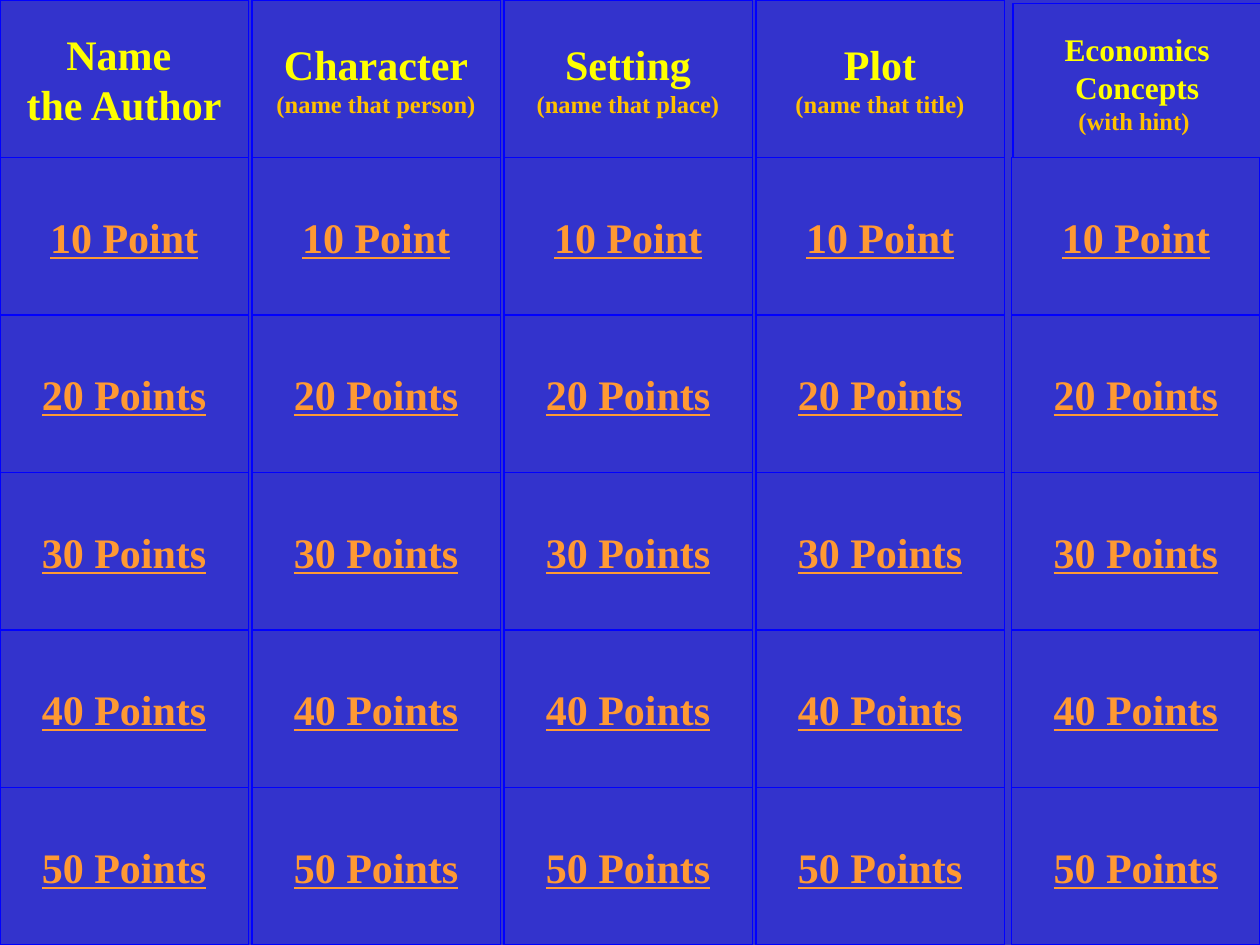
"""Build a quiz board with five categories and five point levels."""
import pptx
import pptx.dml.color
import pptx.enum.shapes
import pptx.enum.text
import pptx.util

Inches = pptx.util.Inches
RGBColor = pptx.dml.color.RGBColor

BOARD_BLUE = RGBColor(0x33, 0x33, 0xCC)
EDGE_BLUE = RGBColor(0x00, 0x00, 0xFF)
TITLE_YELLOW = RGBColor(0xFF, 0xFF, 0x00)
HINT_GOLD = RGBColor(0xFF, 0xC0, 0x00)
POINT_ORANGE = RGBColor(0xFF, 0x99, 0x33)

TILE_WIDTH = 1.97
TILE_HEIGHT = 1.25
COLUMN_LEFTS = [0, 2, 4, 6, 8.03]


def title(text, size=24):
    return text, size, TITLE_YELLOW


def hint(text):
    return text, 14, HINT_GOLD


CATEGORIES = [
    [[title("Name "), title("the Author")]],
    [[title("Character")], [hint("(name that person)")]],
    [[title("Setting")], [hint("(name that place)")]],
    [[title("Plot")], [hint("(name that title)")]],
    [[title("Economics", 18), title("Concepts", 18), hint("(with hint) ")]],
]
POINTS = ["10 Point", "20 Points", "30 Points", "40 Points", "50 Points"]


def add_line(paragraph, text, size, color, underline):
    run = paragraph.add_run()
    run.text = text
    run.font.name = "Times New Roman"
    run.font.size = pptx.util.Pt(size)
    run.font.bold = True
    run.font.underline = underline
    run.font.color.rgb = color


def add_tile(slide, left, top, paragraphs, underline=None):
    tile = slide.shapes.add_shape(
        pptx.enum.shapes.MSO_SHAPE.ACTION_BUTTON_CUSTOM,
        Inches(left), Inches(top), Inches(TILE_WIDTH), Inches(TILE_HEIGHT))
    tile.shadow.inherit = False
    tile.fill.solid()
    tile.fill.fore_color.rgb = BOARD_BLUE
    tile.line.color.rgb = EDGE_BLUE
    tile.line.width = pptx.util.Pt(0.75)
    frame = tile.text_frame
    frame.word_wrap = False
    frame.vertical_anchor = pptx.enum.text.MSO_ANCHOR.MIDDLE
    for index, lines in enumerate(paragraphs):
        paragraph = frame.add_paragraph() if index else frame.paragraphs[0]
        paragraph.alignment = pptx.enum.text.PP_ALIGN.CENTER
        for number, (text, size, color) in enumerate(lines):
            if number:
                paragraph.add_line_break()
            add_line(paragraph, text, size, color, underline)


def add_headings(slide):
    for left, category in zip(COLUMN_LEFTS[:-1], CATEGORIES):
        add_tile(slide, left, 0, category)
    add_tile(slide, 8.04, 0.03, CATEGORIES[-1])


def add_points(slide):
    for row, points in enumerate(POINTS, start=1):
        for left in COLUMN_LEFTS:
            add_tile(slide, left, row * TILE_HEIGHT,
                     [[(points, 24, POINT_ORANGE)]], underline=True)


def main():
    deck = pptx.Presentation()
    deck.slide_width = Inches(10)
    deck.slide_height = Inches(7.5)
    board = deck.slides.add_slide(deck.slide_layouts[6])
    board.background.fill.solid()
    board.background.fill.fore_color.rgb = BOARD_BLUE
    add_headings(board)
    add_points(board)
    deck.save("out.pptx")


if __name__ == "__main__":
    main()
